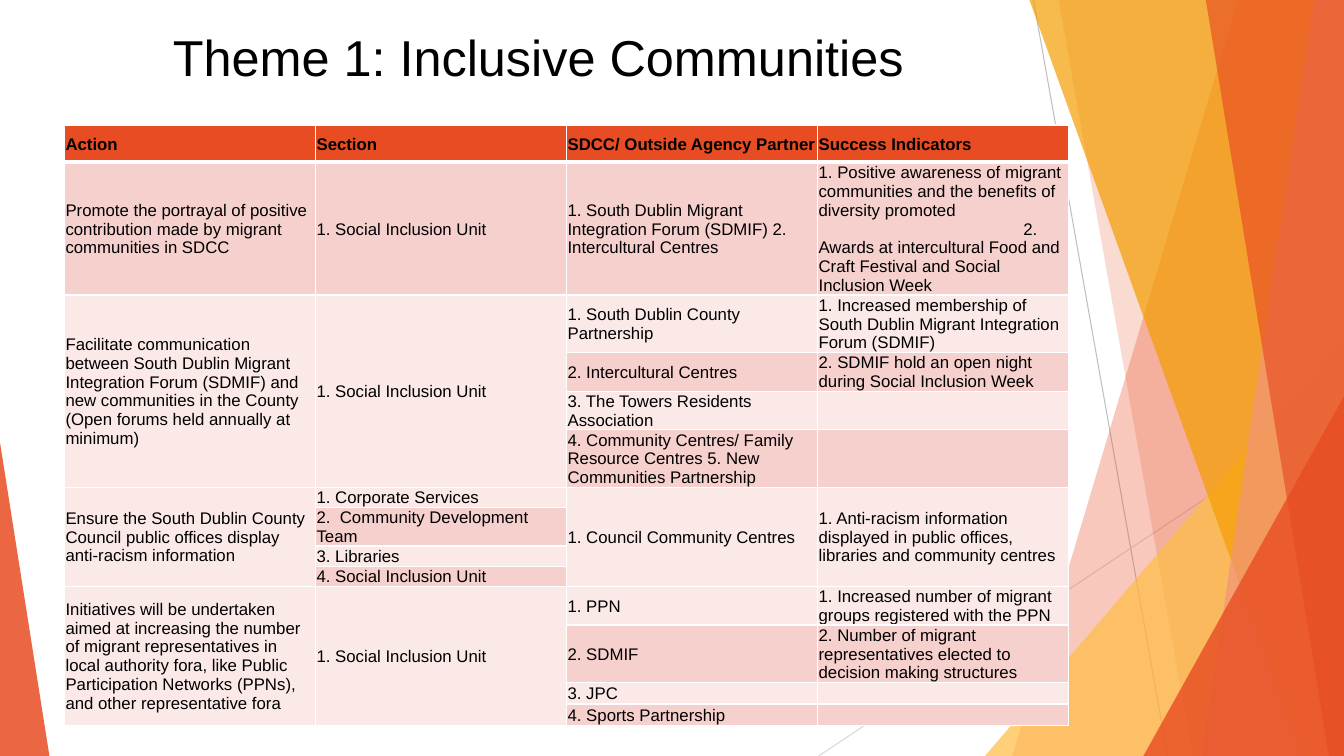
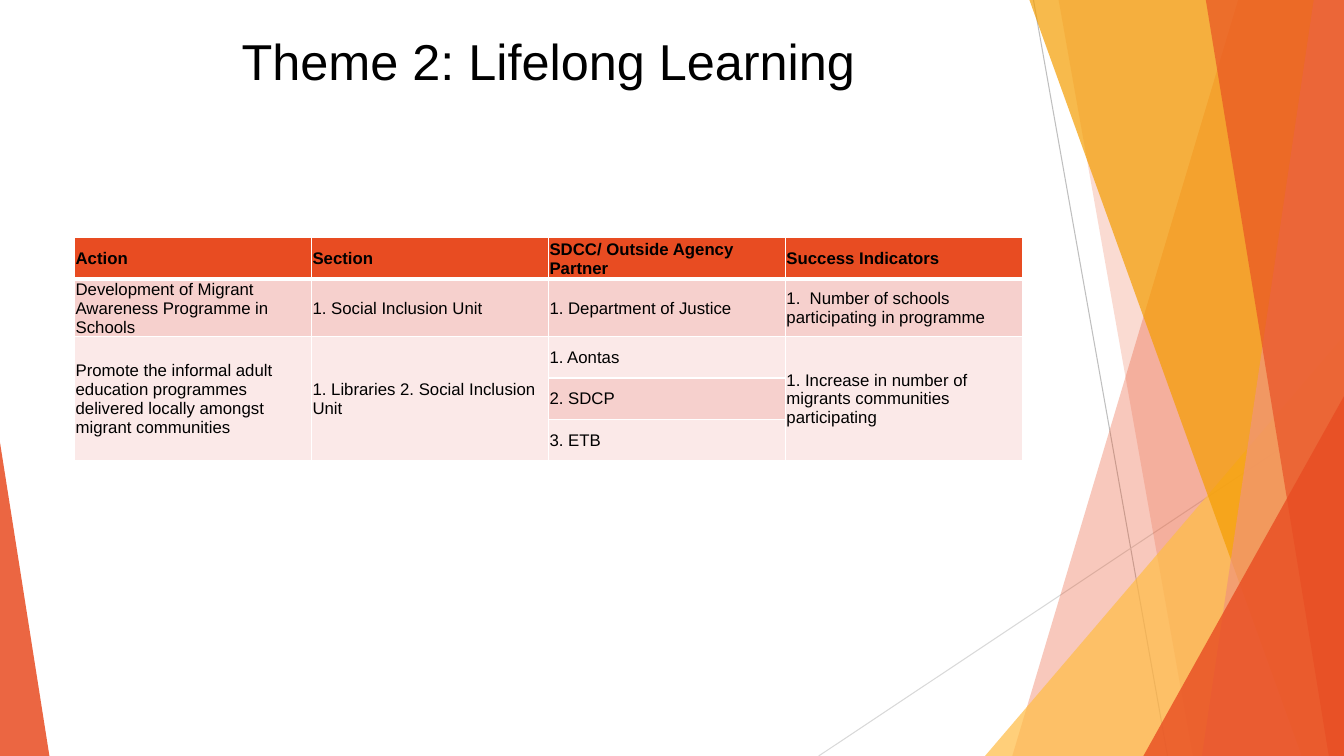
from lxml.etree import SubElement
from pptx import Presentation
from pptx.dml.color import RGBColor
from pptx.enum.shapes import MSO_CONNECTOR, MSO_SHAPE
from pptx.enum.text import MSO_ANCHOR, MSO_AUTO_SIZE, PP_ALIGN
from pptx.oxml.ns import qn
from pptx.util import Inches, Pt

WIDTH, HEIGHT = 13.33, 7.5
FONT = "Arial"
BLACK = RGBColor(0x00, 0x00, 0x00)
WHITE = RGBColor(0xFF, 0xFF, 0xFF)
GREY = RGBColor(0xBF, 0xBF, 0xBF)
LIGHT_GREY = RGBColor(0xD9, 0xD9, 0xD9)
ORANGE = RGBColor(0xE8, 0x4C, 0x22)
AMBER = RGBColor(0xF4, 0x9D, 0x00)
YELLOW = RGBColor(0xFF, 0xBD, 0x47)
SALMON = RGBColor(0xF1, 0x94, 0x7A)
PINK = RGBColor(0xF6, 0xD0, 0xCD)
PALE_PINK = RGBColor(0xFB, 0xE9, 0xE8)

TITLE_FONT = {"size": Pt(36), "name": FONT, "bold": False}
BODY_FONT = {"size": Pt(12), "name": FONT, "bold": False}
HEADER_FONT = BODY_FONT | {"bold": True}
TITLE_FRAME = {
    "vertical_anchor": MSO_ANCHOR.TOP,
    "auto_size": MSO_AUTO_SIZE.NONE,
    "word_wrap": True,
    "margin_top": Inches(0.1),
}
CELL_FORMAT = {
    "vertical_anchor": MSO_ANCHOR.MIDDLE,
    "margin_left": Inches(0.01),
    "margin_right": Inches(0.01),
    "margin_top": Inches(0.01),
    "margin_bottom": 0,
}
SECOND_ITEM_INDENT = Inches(2.03)

HEADER = ["Action", "Section", "SDCC/ Outside Agency Partner", "Success Indicators"]
UNIT = "1. Social Inclusion Unit"
# None continues the cell above
COMMUNITY_ROWS = [
    (0.37, HEADER),
    (1.09, [
        "Promote the portrayal of positive contribution made by migrant communities in SDCC",
        UNIT,
        "1. South Dublin Migrant Integration Forum (SDMIF) 2. Intercultural Centres",
        "1. Positive awareness of migrant communities and the benefits of diversity promoted\n"
        "2. Awards at intercultural Food and Craft Festival and Social Inclusion Week",
    ]),
    (0.55, [
        "Facilitate communication between South Dublin Migrant Integration Forum (SDMIF) and "
        "new communities in the County (Open forums held annually at minimum)",
        UNIT,
        "1. South Dublin County Partnership",
        "1. Increased membership of South Dublin Migrant Integration Forum (SDMIF)",
    ]),
    (0.37, [None, None, "2. Intercultural Centres",
            "2. SDMIF hold an open night during Social Inclusion Week"]),
    (0.37, [None, None, "3. The Towers Residents Association", ""]),
    (0.55, [None, None, "4. Community Centres/ Family Resource Centres "
            "5. New Communities Partnership", ""]),
    (0.2, [
        "Ensure the South Dublin County Council public offices display anti-racism information",
        "1. Corporate Services",
        "1. Council Community Centres",
        "1. Anti-racism information displayed in public offices, libraries and community centres",
    ]),
    (0.37, [None, "2.  Community Development Team", None, None]),
    (0.2, [None, "3. Libraries", None, None]),
    (0.2, [None, "4. Social Inclusion Unit", None, None]),
    (0.37, [
        "Initiatives will be undertaken aimed at increasing the number of migrant "
        "representatives in local authority fora, like Public Participation Networks (PPNs), "
        "and other representative fora",
        UNIT,
        "1. PPN",
        "1. Increased number of migrant groups registered with the PPN",
    ]),
    (0.55, [None, None, "2. SDMIF",
            "2. Number of migrant representatives elected to decision making structures"]),
    (0.2, [None, None, "3. JPC", ""]),
    (0.2, [None, None, "4. Sports Partnership", ""]),
]
LEARNING_ROWS = [
    (0.41, HEADER),
    (0.41, [
        "Development of Migrant Awareness Programme in Schools",
        UNIT,
        "1. Department of Justice",
        "1.  Number of schools participating in programme",
    ]),
    (0.41, [
        "Promote the informal adult education programmes delivered locally amongst "
        "migrant communities",
        "1. Libraries 2. Social Inclusion Unit",
        "1. Aontas",
        "1. Increase in number of migrants communities participating",
    ]),
    (0.41, [None, None, "2. SDCP", None]),
    (0.41, [None, None, "3. ETB", None]),
]


def apply_format(target, values):
    for name, value in values.items():
        setattr(target, name, value)


def add_hairline(page, start, end, color):
    line = page.shapes.add_connector(
        MSO_CONNECTOR.STRAIGHT, *(Inches(length) for length in start + end))
    line.line.color.rgb = color
    line.line.width = Pt(0.75)
    SubElement(line.element.spPr, qn("a:effectLst"))


def paint(shape, color, opacity):
    shape.shadow.inherit = False
    shape.line.fill.background()
    shape.fill.solid()
    shape.fill.fore_color.rgb = color
    tint = shape.element.spPr.find(qn("a:solidFill")).find(qn("a:srgbClr"))
    SubElement(tint, qn("a:alpha"), val=str(opacity * 1000))


def add_band(page, top_x, bottom_x, color, opacity):
    corners = [(top_x, 0), (WIDTH, 0), (WIDTH, HEIGHT), (bottom_x, HEIGHT)]
    points = [(Inches(x), Inches(y)) for x, y in corners]
    builder = page.shapes.build_freeform(*points[0])
    builder.add_line_segments(points[1:], close=True)
    paint(builder.convert_to_shape(), color, opacity)


def add_wedge(page, left, top, width, apex, color, opacity):
    wedge = page.shapes.add_shape(
        MSO_SHAPE.ISOSCELES_TRIANGLE, Inches(left), Inches(top),
        Inches(width), Inches(HEIGHT - top))
    wedge.adjustments[0] = apex
    paint(wedge, color, opacity)


def decorate_layout(page, layout):
    for placeholder in list(layout.placeholders)[1:]:
        layout.shapes.element.remove(placeholder.element)
    add_hairline(page, (10.25, 0), (11.58, HEIGHT), GREY)
    add_hairline(page, (WIDTH, 4.03), (8.12, HEIGHT), LIGHT_GREY)
    add_band(page, 12.28, 10.04, ORANGE, 30)
    add_band(page, 10.5, 11.83, ORANGE, 20)
    add_wedge(page, 9.77, 3.33, 3.56, 1, YELLOW, 72)
    add_band(page, 10.21, 12.91, AMBER, 70)
    add_band(page, 13.03, 11.92, SALMON, 70)
    add_band(page, 11.96, 13.18, ORANGE, 65)
    add_wedge(page, 11.34, 3.93, 1.99, 1, ORANGE, 80)
    add_wedge(page, 0, 4.39, 0.49, 0, ORANGE, 85)
    for shape in list(page.shapes)[1:]:
        layout.shapes.element.append(shape.element)


def write_span(para, text, font):
    span = para.add_run()
    span.text = text
    apply_format(span.font, font)
    span.font.color.rgb = BLACK


def set_title(page, text, left, top, width, height):
    title = page.shapes.title
    apply_format(title, {"left": Inches(left), "top": Inches(top),
                         "width": Inches(width), "height": Inches(height)})
    apply_format(title.text_frame, TITLE_FRAME)
    para = title.text_frame.paragraphs[0]
    para.alignment = PP_ALIGN.CENTER
    write_span(para, text, TITLE_FONT)


def set_borders(cell, row):
    properties = cell._tc.get_or_add_tcPr()
    widths = {"L": 1, "R": 1, "T": 3 if row == 1 else 1, "B": 3 if row == 0 else 1}
    for position, (side, points) in enumerate(widths.items()):
        border = SubElement(properties, qn(f"a:ln{side}"), w=str(Pt(points)))
        fill = SubElement(border, qn("a:solidFill"))
        SubElement(fill, qn("a:srgbClr"), val=str(WHITE))
        properties.insert(position, border)


def fill_cell(cell, row, text):
    apply_format(cell, CELL_FORMAT)
    cell.fill.solid()
    cell.fill.fore_color.rgb = ORANGE if row == 0 else (PALE_PINK, PINK)[row % 2]
    set_borders(cell, row)
    frame = cell.text_frame
    for number, line in enumerate((text or "").split("\n")):
        para = frame.add_paragraph() if number else frame.paragraphs[0]
        if number:
            para._p.get_or_add_pPr().set("indent", str(SECOND_ITEM_INDENT))
        if line:
            write_span(para, line, BODY_FONT if row else HEADER_FONT)
        else:
            SubElement(para._p, qn("a:endParaRPr"), sz="1200")


def add_action_table(page, rows, left, top, column_width):
    height = sum(row_height for row_height, _ in rows)
    table = page.shapes.add_table(
        len(rows), len(HEADER), Inches(left), Inches(top),
        Inches(column_width * len(HEADER)), Inches(height)).table
    for column in table.columns:
        column.width = Inches(column_width)
    for row, (row_height, texts) in enumerate(rows):
        table.rows[row].height = Inches(row_height)
        for column, text in enumerate(texts):
            fill_cell(table.cell(row, column), row, text)
    for column in range(len(HEADER)):
        starts = [row for row, (_, texts) in enumerate(rows) if texts[column] is not None]
        for start, following in zip(starts, starts[1:] + [len(rows)]):
            if following - start > 1:
                table.cell(start, column).merge(table.cell(following - 1, column))


def main():
    deck = Presentation()
    deck.slide_width, deck.slide_height = Inches(WIDTH), Inches(HEIGHT)
    layout = deck.slide_layouts[5]

    communities = deck.slides.add_slide(layout)
    decorate_layout(communities, layout)
    set_title(communities, "Theme 1: Inclusive Communities", 0.64, 0.16, 9.4, 0.85)
    add_action_table(communities, COMMUNITY_ROWS, 0.64, 1.24, 2.49)

    learning = deck.slides.add_slide(layout)
    set_title(learning, "Theme 2: Lifelong Learning", 0.74, 0.2, 9.4, 0.74)
    add_action_table(learning, LEARNING_ROWS, 0.74, 2.36, 2.35)

    deck.save("out.pptx")


if __name__ == "__main__":
    main()
